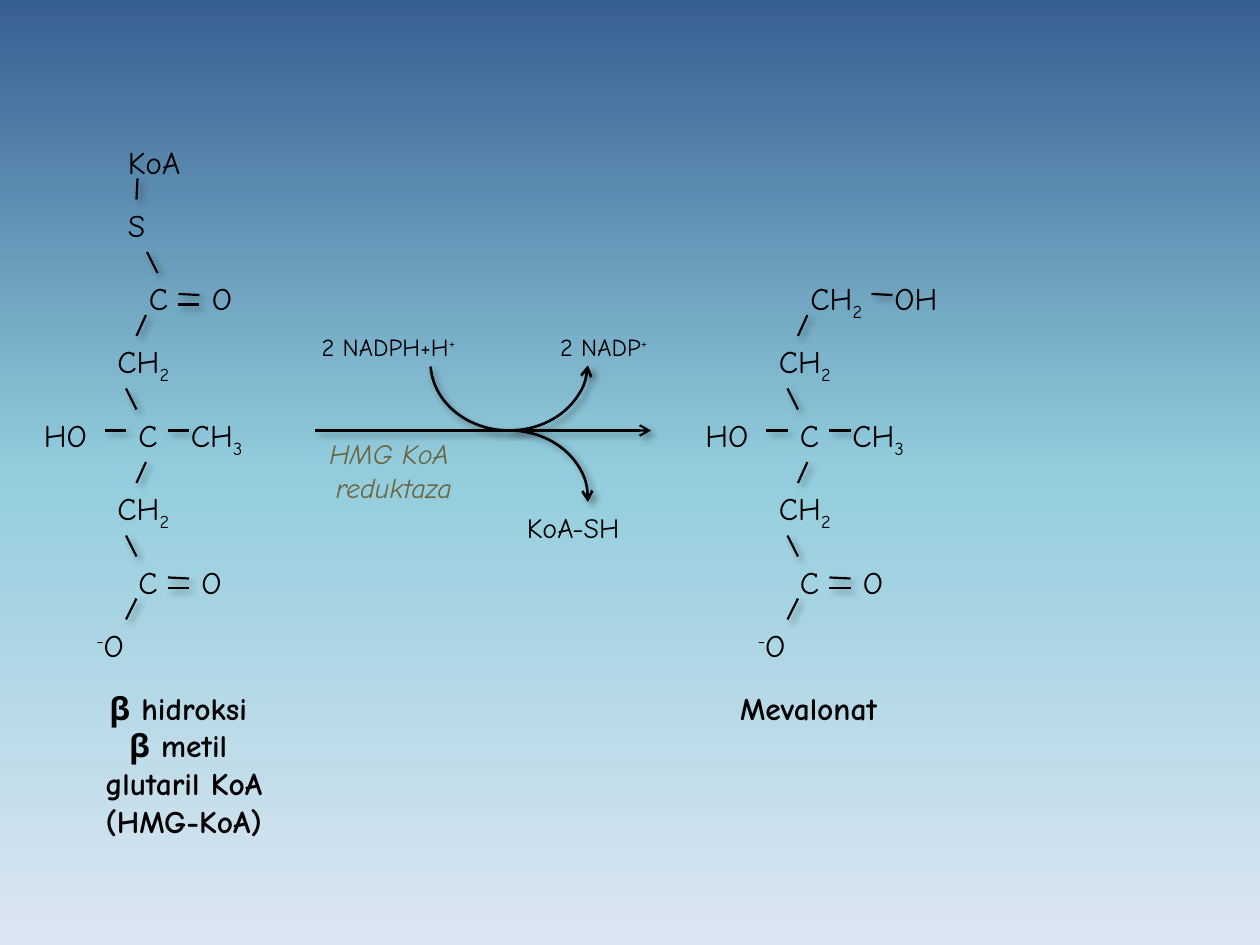
"""Build a slide of the HMG-CoA reductase reaction."""
from copy import deepcopy
from lxml import etree
from pptx import Presentation
from pptx.dml.color import RGBColor
from pptx.enum.shapes import MSO_CONNECTOR, MSO_SHAPE
from pptx.enum.text import PP_ALIGN
from pptx.oxml import parse_xml
from pptx.util import Pt

PX = 914400 // 120
LINE, ARC = MSO_CONNECTOR.STRAIGHT, MSO_SHAPE.ARC
LEFT, MID = PP_ALIGN.LEFT, PP_ALIGN.CENTER
NS = "http://schemas.openxmlformats.org/drawingml/2006/main"
FONT, INK, GOLD = "Comic Neue", "000000", "6B633D"
SKY = [(0, "376092"), (0.5, "93CDDD"), (1, "DCE6F2")]
BASE = {"^": "30000", "_": "-25000"}
SHADE = f"""<a:effectLst xmlns:a="{NS}">
<a:outerShdw blurRad="50800" dist="38100" dir="2700000" algn="tl" rotWithShape="0">
<a:srgbClr val="{INK}"><a:alpha val="40000"/></a:srgbClr>
</a:outerShdw></a:effectLst>"""

# Atoms are (text, x, y, width); "|" splits runs, "^" raises and "_" lowers one.
CORE = [
    ("HO", 30, 390, 72), ("C", 120, 390, 80), ("CH|_3", 170, 390, 80),
    ("CH|_2", 100, 320, 80), ("CH|_2", 100, 460, 80),
    ("C", 120, 530, 42), ("O", 180, 530, 48), ("^-|O", 80, 590, 80),
]
BONDS = [
    (100, 410, 120, 410), (160, 410, 180, 410),
    (130, 320, 139, 300), (130, 390, 120, 370), (130, 460, 139, 440),
    (130, 530, 120, 510), (120, 590, 130, 570),
    (160, 550, 180, 551), (160, 560, 180, 560),
]
HEAD = [
    ("KoA", 110, 130, 80), ("S", 110, 190, 46),
    ("C", 130, 260, 42), ("O", 190, 260, 48),
]
LINKS = [
    (130, 190, 131, 170), (150, 260, 140, 240),
    (170, 280, 190, 281), (170, 290, 190, 290),
]
ENDS = [("CH|_2", 130, 260, 78), ("OH", 210, 260, 72)]
TIES = [(200, 280, 220, 281)]
PARTS = [(0, CORE + HEAD, BONDS + LINKS), (630, CORE + ENDS, BONDS + TIES)]

NAMES = [
    ("β hidroksi \nβ metil \nglutaril KoA\n(HMG-KoA)", (40, 650, 270, 140)),
    ("Mevalonat", (670, 650, 200, 60)),
]
NOTES = [
    ("2 NADPH+H|^+", (270, 310, 200, 40), 14, MID),
    ("2 NADP|^+", (500, 310, 150, 40), 14, MID),
    ("KoA-SH", (490, 480, 125, 44), 16, LEFT),
]
ENZYME = ("HMG KoA \nreduktaza", (300, 410, 150, 60))
ARROW = (300, 410, 620, 410)
ARCS = [
    ((410, 280, 150, 130), (1.345, 106.113), "headEnd"),
    ((410, 410, 150, 130), (161.429, 1.429), "tailEnd"),
]


def rgb(code):
    return RGBColor.from_string(code)


def px(*nums):
    return [n * PX for n in nums]


def paint(slide):
    fill = slide.background.fill
    fill.gradient()
    fill.gradient_angle = 270
    first = fill.gradient_stops[0]._gs
    first.addnext(deepcopy(first))
    for stop, (pos, code) in zip(fill.gradient_stops, SKY):
        stop.position = pos
        stop.color.rgb = rgb(code)


def write(slide, text, box, size=18, align=LEFT, color=INK, bold=False, slant=False):
    frame = slide.shapes.add_textbox(*px(*box)).text_frame
    frame.word_wrap = True
    for i, row in enumerate(text.split("\n")):
        para = frame.add_paragraph() if i else frame.paragraphs[0]
        para.alignment = align
        font = para.font
        font.name, font.size = FONT, Pt(size)
        font.bold, font.italic = bold, slant
        font.color.rgb = rgb(color)
        for part in row.split("|"):
            run = para.add_run()
            run.text = part.lstrip("^_")
            if part[0] in BASE:
                run._r.get_or_add_rPr().set("baseline", BASE[part[0]])


def ink(shape, width, end=None):
    shape.line.color.rgb = rgb(INK)
    shape.line.width = Pt(width)
    if end:
        tip = etree.SubElement(shape.line._get_or_add_ln(), f"{{{NS}}}{end}")
        tip.set("type", "arrow")
    shape._element.spPr.append(parse_xml(SHADE))


def bond(slide, ends, end=None):
    ink(slide.shapes.add_connector(LINE, *px(*ends)), 1.25, end)


def curve(slide, box, turns, end):
    arc = slide.shapes.add_shape(ARC, *px(*box))
    arc.adjustments[0], arc.adjustments[1] = turns
    arc.fill.background()
    ink(arc, 1.5, end)


def main():
    deck = Presentation()
    deck.slide_width, deck.slide_height = px(1200, 900)
    slide = deck.slides.add_slide(deck.slide_layouts[6])
    paint(slide)
    for dx, atoms, bonds in PARTS:
        for x1, y1, x2, y2 in bonds:
            bond(slide, (x1 + dx, y1, x2 + dx, y2))
        for text, x, y, w in atoms:
            write(slide, text, (x + dx, y, w, 48))
    for text, box in NAMES:
        write(slide, text, box, align=MID, bold=True)
    for note in NOTES:
        write(slide, *note)
    write(slide, *ENZYME, 16, MID, GOLD, slant=True)
    bond(slide, ARROW, "tailEnd")
    for arc in ARCS:
        curve(slide, *arc)
    deck.save("out.pptx")


if __name__ == "__main__":
    main()
